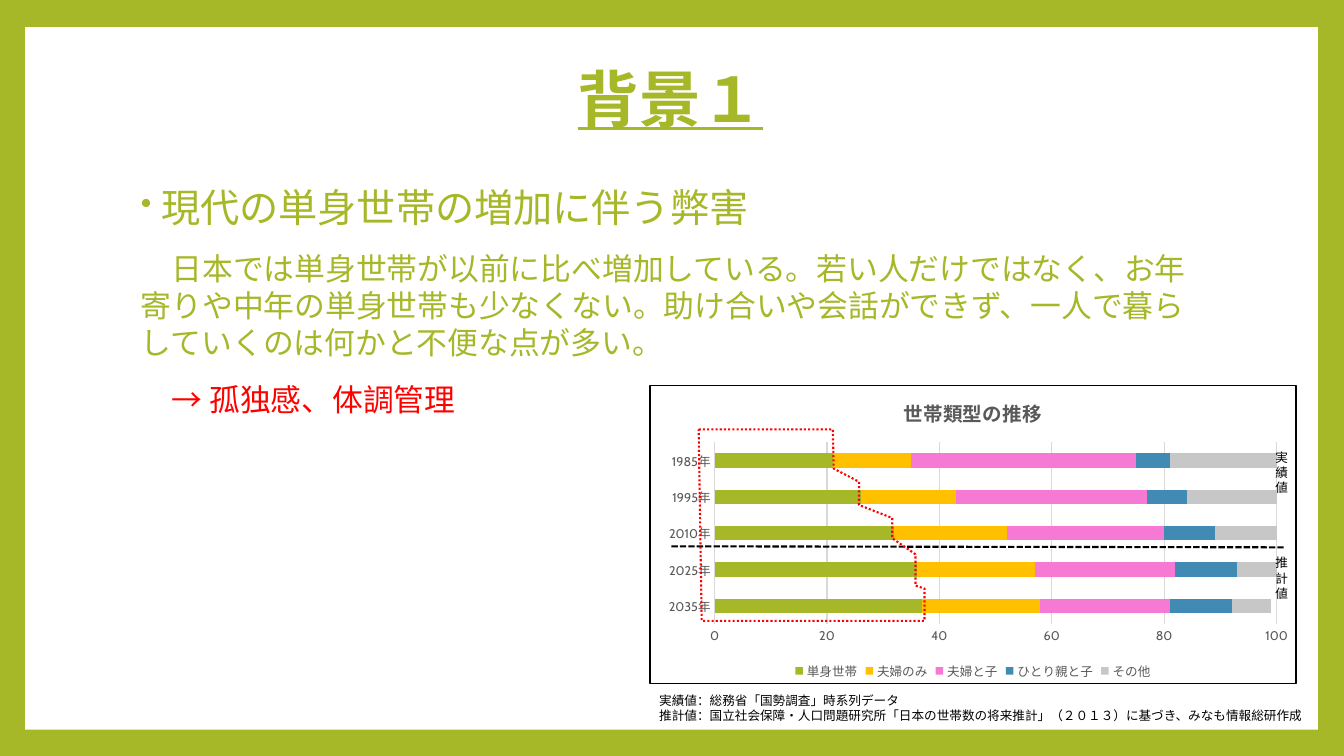
from dataclasses import dataclass
from typing import NamedTuple

from lxml import etree
from pptx import Presentation
from pptx import util as u
from pptx.chart import data as chart_data
from pptx.dml.color import RGBColor
from pptx.enum import chart as charts
from pptx.enum import dml, shapes, text
from pptx.oxml import ns, parse_xml

Inches = u.Inches


@dataclass(frozen=True)
class Theme:
    font: str = "Cabin"
    green: str = "A6B727"
    white: str = "FFFFFF"
    black: str = "000000"
    red: str = "FF0000"
    grey: str = "595959"
    rule: str = "D9D9D9"
    title: int = 44
    heading: int = 28
    body: int = 22
    chart_title: int = 14
    small: int = 9


THEME = Theme()


class Box(NamedTuple):
    left: float
    top: float
    width: float
    height: float

    def emu(self) -> list:
        return [Inches(length) for length in self]


class Line(NamedTuple):
    words: str
    size: int = THEME.small
    color: str = THEME.black
    bold: bool = False
    underline: bool = False
    space_before: int = 0
    margin: float = 0
    indent: float = 0
    bullet: str = ""
    align: text.PP_ALIGN = text.PP_ALIGN.LEFT
    spacing: float = 1.0


class Block(NamedTuple):
    box: Box
    lines: list
    anchor: text.MSO_ANCHOR = text.MSO_ANCHOR.TOP


class Household(NamedTuple):
    name: str
    color: str
    shares: tuple


BLOCKS = [
    Block(Box(1.25, 0.28, 10.8, 1.48), [
        Line("背景１", THEME.title, THEME.green, bold=True, underline=True,
             align=text.PP_ALIGN.CENTER, spacing=0.9),
    ], text.MSO_ANCHOR.MIDDLE),
    Block(Box(1.25, 1.77, 10.8, 2.65), [
        Line("現代の単身世帯の増加に伴う弊害", THEME.heading, THEME.green,
             space_before=14, margin=0.25, indent=-0.2, bullet="•"),
        Line("\u3000日本では単身世帯が以前に比べ増加している。若い人だけではなく、お年寄りや中年の単身世帯も"
             "少なくない。助け合いや会話ができず、一人で暮らしていくのは何かと不便な点が多い。",
             THEME.body, THEME.green, space_before=14, margin=0.05),
        Line("\u3000→ 孤独感、体調管理", THEME.body, THEME.red,
             space_before=14, margin=0.05),
    ]),
]
CHART_NOTES = [
    Block(Box(6.44, 6.82, 6.63, 0.4), [
        Line("実績値：総務省「国勢調査」時系列データ"),
        Line("推計値：国立社会保障・人口問題研究所「日本の世帯数の将来推計」（２０１３）に基づき、みなも情報総研作成"),
    ]),
    Block(Box(12.55, 4.41, 0.32, 0.56), [Line("実績値")]),
    Block(Box(12.55, 5.46, 0.32, 0.56), [Line("推計値")]),
]
YEARS = [f"{year}年" for year in (2035, 2025, 2010, 1995, 1985)]
HOUSEHOLDS = [
    Household("単身世帯", THEME.green, (37, 36, 32, 26, 21)),
    Household("夫婦のみ", "FFC000", (21, 21, 20, 17, 14)),
    Household("夫婦と子", "F67AD3", (23, 25, 28, 34, 40)),
    Household("ひとり親と子", "418AB3", (11, 11, 9, 7, 6)),
    Household("その他", "C7C7C7", (7, 8, 11, 16, 19)),
]
SINGLES_OUTLINE = [
    (6.93, 4.26), (8.26, 4.26), (8.27, 4.65), (8.52, 4.78), (8.52, 5.01),
    (8.85, 5.14), (8.85, 5.34), (9.08, 5.5), (9.08, 5.81), (9.17, 5.84),
    (9.17, 6.16), (6.96, 6.16),
]


def rgb(color: str) -> RGBColor:
    return RGBColor.from_string(color)


def set_font(font, size: int, color: str, bold: bool = False) -> None:
    font.name = THEME.font
    font.size = u.Pt(size)
    font.bold = bold
    font.color.rgb = rgb(color)


def set_line(line, color: str, width: float, dash=None) -> None:
    line.color.rgb = rgb(color)
    line.width = u.Pt(width)
    if dash is not None:
        line.dash_style = dash


def add_line(paragraph, line: Line) -> None:
    paragraph.alignment = line.align
    paragraph.line_spacing = line.spacing
    paragraph.space_before = u.Pt(line.space_before)
    properties = paragraph._p.get_or_add_pPr()
    properties.set("marL", str(Inches(line.margin)))
    properties.set("indent", str(Inches(line.indent)))
    if line.bullet:
        color = etree.SubElement(properties, ns.qn("a:buClr"))
        etree.SubElement(color, ns.qn("a:srgbClr"), val=line.color)
        etree.SubElement(properties, ns.qn("a:buSzPct"), val="80000")
        etree.SubElement(properties, ns.qn("a:buChar"), char=line.bullet)
    run = paragraph.add_run()
    run.text = line.words
    set_font(run.font, line.size, line.color, line.bold)
    run.font.underline = line.underline
    etree.SubElement(run._r.get_or_add_rPr(), ns.qn("a:ea"), typeface=THEME.font)


def add_block(slide, block: Block) -> None:
    frame = slide.shapes.add_textbox(*block.box.emu()).text_frame
    frame.word_wrap = True
    frame.vertical_anchor = block.anchor
    for index, line in enumerate(block.lines):
        add_line(frame.add_paragraph() if index else frame.paragraphs[0], line)


def add_household_chart(slide, box: Box) -> None:
    shares = chart_data.CategoryChartData()
    shares.categories = YEARS
    for household in HOUSEHOLDS:
        shares.add_series(household.name, household.shares)
    chart = slide.shapes.add_chart(
        charts.XL_CHART_TYPE.BAR_STACKED, *box.emu(), shares).chart
    set_font(chart.font, 10, THEME.black)
    add_line(chart.chart_title.text_frame.paragraphs[0],
             Line("世帯類型の推移", THEME.chart_title, THEME.grey, bold=True,
                  align=text.PP_ALIGN.CENTER))
    chart.has_legend = True
    chart.legend.position = charts.XL_LEGEND_POSITION.BOTTOM
    chart.legend.include_in_layout = False
    set_font(chart.legend.font, THEME.small, THEME.grey)

    bars = chart.plots[0]
    bars.gap_width, bars.overlap, bars.vary_by_categories = 150, 100, False
    for series, household in zip(bars.series, HOUSEHOLDS):
        series.format.fill.solid()
        series.format.fill.fore_color.rgb = rgb(household.color)

    years, percent = chart.category_axis, chart.value_axis
    for axis in (years, percent):
        axis.major_tick_mark = axis.minor_tick_mark = charts.XL_TICK_MARK.NONE
        set_font(axis.tick_labels.font, THEME.small, THEME.grey)
    set_line(years.format.line, THEME.rule, 0.75)
    percent.format.line.fill.background()
    percent.minimum_scale, percent.maximum_scale, percent.major_unit = 0, 100, 20
    set_line(percent.major_gridlines.format.line, THEME.rule, 0.75)

    space = chart._chartSpace
    space.chart.addnext(parse_xml(
        f'<c:spPr {ns.nsdecls("c", "a")}><a:noFill/><a:ln w="{u.Pt(1)}"><a:solidFill>'
        f'<a:srgbClr val="{THEME.black}"/></a:solidFill></a:ln></c:spPr>'))
    area = space.chart.plotArea
    for old in area.findall(ns.qn("c:layout")):
        area.remove(old)
    area.insert(0, parse_xml(
        f'<c:layout {ns.nsdecls("c")}><c:manualLayout><c:layoutTarget val="inner"/>'
        '<c:xMode val="edge"/><c:yMode val="edge"/><c:x val="0.1"/><c:y val="0.19"/>'
        '<c:w val="0.87"/><c:h val="0.61"/></c:manualLayout></c:layout>'))


def add_forecast_divider(slide) -> None:
    divider = slide.shapes.add_connector(
        shapes.MSO_CONNECTOR.STRAIGHT, *Box(6.66, 5.42, 12.75, 5.43).emu())
    set_line(divider.line, THEME.black, 1.5, dml.MSO_LINE.SQUARE_DOT)
    etree.SubElement(divider._element.spPr, ns.qn("a:effectLst"))


def add_singles_outline(slide) -> None:
    start, *corners = [(Inches(x), Inches(y)) for x, y in SINGLES_OUTLINE]
    builder = slide.shapes.build_freeform(*start)
    builder.add_line_segments(corners, close=True)
    outline = builder.convert_to_shape()
    outline.shadow.inherit = False
    outline.fill.background()
    set_line(outline.line, THEME.red, 1.5, dml.MSO_LINE.ROUND_DOT)


def main() -> None:
    deck = Presentation()
    deck.slide_width, deck.slide_height = Inches(13.33), Inches(7.5)
    slide = deck.slides.add_slide(deck.slide_layouts[6])
    slide.background.fill.solid()
    slide.background.fill.fore_color.rgb = rgb(THEME.green)
    page = slide.shapes.add_shape(
        shapes.MSO_SHAPE.RECTANGLE, *Box(0.25, 0.27, 12.82, 6.97).emu())
    page.shadow.inherit = False
    page.fill.solid()
    page.fill.fore_color.rgb = rgb(THEME.white)
    page.line.fill.background()
    for block in BLOCKS:
        add_block(slide, block)
    add_household_chart(slide, Box(6.44, 3.82, 6.42, 2.97))
    for note in CHART_NOTES:
        add_block(slide, note)
    add_forecast_divider(slide)
    add_singles_outline(slide)
    deck.save("out.pptx")


if __name__ == "__main__":
    main()
